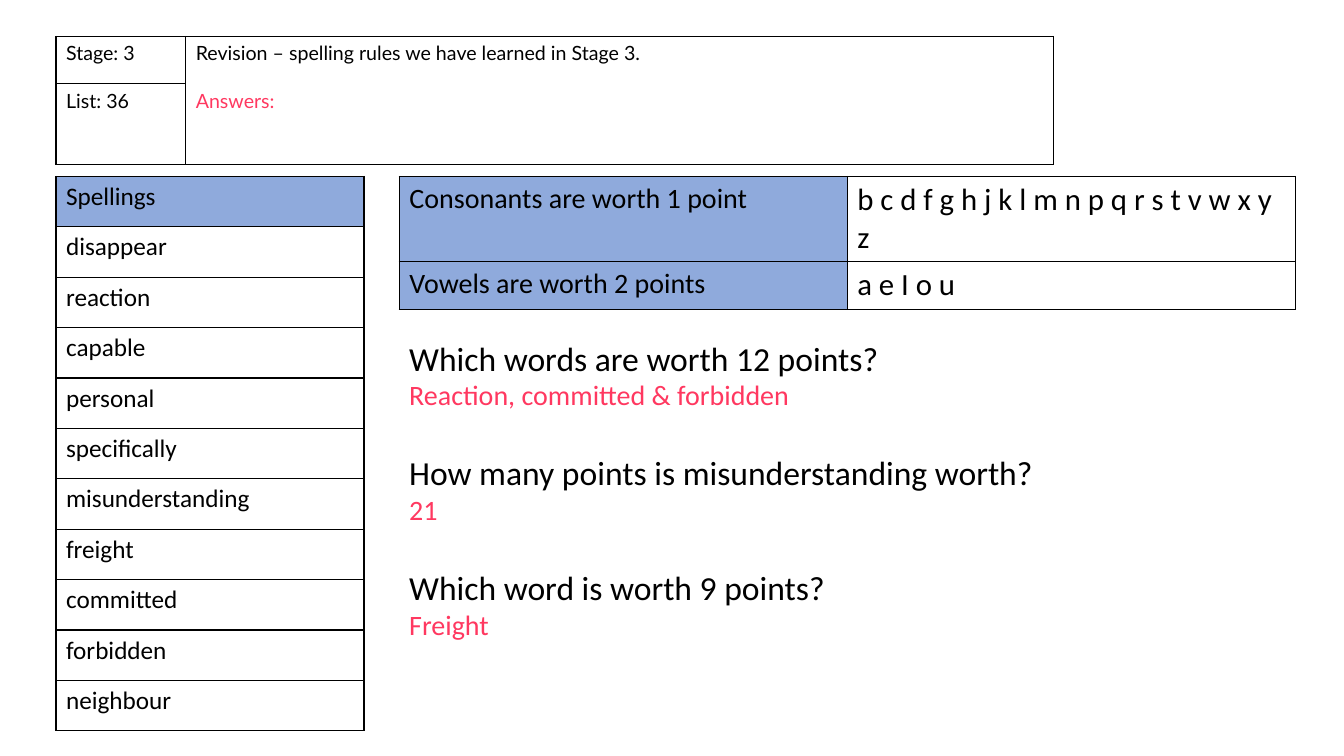
from dataclasses import dataclass

from lxml.etree import SubElement
from pptx import Presentation
from pptx.dml.color import RGBColor
from pptx.oxml.ns import qn
from pptx.util import Emu, Inches, Pt

GRID_COLUMNS, GRID_ROWS = 120, 67.5
UNIT = Inches(1) / 9


@dataclass(frozen=True)
class Theme:
    """Colours, fonts and type sizes of the slide."""
    ink: str = "000000"
    answer: str = "FF3860"
    heading_fill: str = "8FAADC"
    body_font: str = "Calibri"
    label_font: str = "Lato"
    label: int = 14
    word: int = 18
    rule: int = 20
    letters: int = 22
    question: int = 24
    border: int = 1
    answer_gap: int = 17
    question_gap: int = 29


@dataclass(frozen=True)
class Box:
    """A region measured in grid columns and rows."""
    left: float
    top: float
    width: float
    height: float

    def lengths(self):
        """Return the region as left, top, width and height lengths."""
        return [grid(value) for value in (self.left, self.top, self.width, self.height)]


THEME = Theme()
SPELLINGS = ["disappear", "reaction", "capable", "personal", "specifically",
             "misunderstanding", "freight", "committed", "forbidden", "neighbour"]
SCORES = [("Consonants are worth 1 point", "b c d f g h j k l m n p q r s t v w x y z"),
          ("Vowels are worth 2 points", "a e I o u")]
QUESTIONS = [("Which words are worth 12 points?", "Reaction, committed & forbidden"),
             ("How many points is misunderstanding worth?", "21"),
             ("Which word is worth 9 points?", "Freight")]


def grid(units):
    """Convert grid units to a length."""
    return Emu(round(units * UNIT))


def write(paragraph, text, size, font=THEME.body_font, color=THEME.ink, gap=0):
    """Put formatted text in a paragraph."""
    paragraph.text = text
    paragraph.font.size = Pt(size)
    paragraph.font.name = font
    paragraph.font.color.rgb = RGBColor.from_string(color)
    if gap:
        paragraph.space_before = Pt(gap)


def outline(cell):
    """Draw a solid border on all four sides of a cell."""
    properties = cell._tc.get_or_add_tcPr()
    for side in ("a:lnL", "a:lnR", "a:lnT", "a:lnB"):
        line = SubElement(properties, qn(side), w=str(Pt(THEME.border)))
        fill = SubElement(line, qn("a:solidFill"))
        SubElement(fill, qn("a:srgbClr"), val=THEME.ink)


def shade(cell):
    """Fill a heading cell."""
    cell.fill.solid()
    cell.fill.fore_color.rgb = RGBColor.from_string(THEME.heading_fill)


def add_grid_table(slide, box, column_shares, row_shares):
    """Add an outlined, unfilled table divided by shares of its box."""
    table = slide.shapes.add_table(len(row_shares), len(column_shares), *box.lengths()).table
    table.first_row = table.horz_banding = False
    for column, share in zip(table.columns, column_shares):
        column.width = grid(box.width * share)
    for row, share in zip(table.rows, row_shares):
        row.height = grid(box.height * share)
    for cell in table.iter_cells():
        outline(cell)
        cell.fill.background()
    return table


def add_header(slide, box):
    """Add the stage, list and topic table."""
    table = add_grid_table(slide, box, (0.13, 0.87), (0.37, 0.63))
    table.cell(0, 1).merge(table.cell(1, 1))
    for row, label in enumerate(("Stage: 3", "List: 36")):
        write(table.cell(row, 0).text_frame.paragraphs[0], label, THEME.label, THEME.label_font)
    topic = table.cell(0, 1).text_frame
    write(topic.paragraphs[0], "Revision – spelling rules we have learned in Stage 3.",
          THEME.label, THEME.label_font)
    write(topic.add_paragraph(), "Answers:", THEME.label, THEME.label_font,
          THEME.answer, THEME.answer_gap)


def add_spellings(slide, box):
    """Add the column of spelling words under its heading."""
    words = ["Spellings", *SPELLINGS]
    table = add_grid_table(slide, box, (1,), [1 / len(words)] * len(words))
    for row, word in enumerate(words):
        write(table.cell(row, 0).text_frame.paragraphs[0], word, THEME.word)
    shade(table.cell(0, 0))


def add_scores(slide, box):
    """Add the table of letter scores."""
    table = add_grid_table(slide, box, (0.5, 0.5), (0.64, 0.36))
    for row, (rule, letters) in enumerate(SCORES):
        write(table.cell(row, 0).text_frame.paragraphs[0], rule, THEME.rule)
        write(table.cell(row, 1).text_frame.paragraphs[0], letters, THEME.letters)
        shade(table.cell(row, 0))


def add_questions(slide, box):
    """Add the questions, each followed by its answer."""
    frame = slide.shapes.add_textbox(*box.lengths()).text_frame
    frame.word_wrap = True
    for index, (question, answer) in enumerate(QUESTIONS):
        paragraph = frame.add_paragraph() if index else frame.paragraphs[0]
        write(paragraph, question, THEME.question, gap=THEME.question_gap if index else 0)
        write(frame.add_paragraph(), answer, THEME.rule, color=THEME.answer)


def main():
    """Build and save the revision slide."""
    presentation = Presentation()
    presentation.slide_width = grid(GRID_COLUMNS)
    presentation.slide_height = grid(GRID_ROWS)
    slide = presentation.slides.add_slide(presentation.slide_layouts[6])
    add_spellings(slide, Box(5, 15.75, 27.5, 49.5))
    add_header(slide, Box(5, 3.25, 89.1, 11.45))
    add_scores(slide, Box(35.65, 15.75, 80, 11.85))
    add_questions(slide, Box(35.65, 29.7, 80, 31.75))
    presentation.save("out.pptx")


if __name__ == "__main__":
    main()
